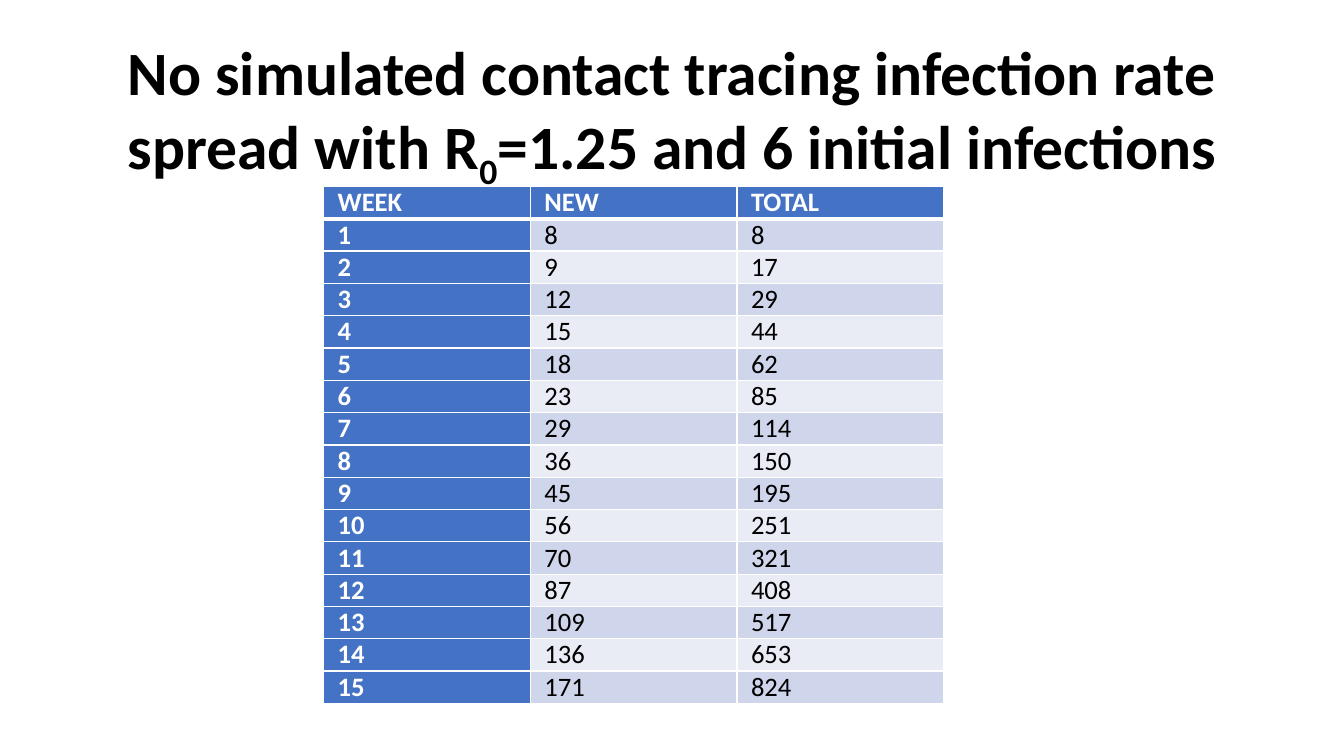
from itertools import accumulate

from lxml import etree
from pptx import Presentation
from pptx.dml.color import RGBColor
from pptx.enum.text import MSO_ANCHOR, MSO_AUTO_SIZE, PP_ALIGN
from pptx.oxml.ns import qn
from pptx.util import Inches, Pt

CENTER = PP_ALIGN.CENTER
JUSTIFY = PP_ALIGN.JUSTIFY
MIDDLE = MSO_ANCHOR.MIDDLE
BOTTOM = MSO_ANCHOR.BOTTOM
NO_AUTOFIT = MSO_AUTO_SIZE.NONE

FONT = "Calibri"
BLACK, WHITE, BLUE = "000000", "FFFFFF", "4472C4"
BANDS = ("CFD5EA", "E9EBF5")
TITLE_ONLY_LAYOUT = 5

HEADINGS = ("WEEK", "NEW", "TOTAL")
NEW_INFECTIONS = (8, 9, 12, 15, 18, 23, 29, 36, 45, 56, 70, 87, 109, 136, 171)
COLUMN_WIDTH, ROW_HEIGHT = 2.05, 0.32


def rgb(value):
    return RGBColor.from_string(value)


def add_run(paragraph, text, size, color, bold, baseline=None):
    run = paragraph.add_run()
    run.text = text
    run.font.name = FONT
    run.font.size = Pt(size)
    run.font.bold = bold
    run.font.color.rgb = rgb(color)
    if baseline is not None:
        run.font._element.set("baseline", str(baseline * 1000))


def fill_title(title):
    title.left, title.top = Inches(0.92), Inches(0.4)
    title.width, title.height = Inches(11.5), Inches(1.45)
    frame = title.text_frame
    frame.word_wrap = True
    frame.auto_size = NO_AUTOFIT
    frame.vertical_anchor = MIDDLE
    paragraph = frame.paragraphs[0]
    paragraph.alignment = CENTER
    paragraph.line_spacing = 0.9
    add_run(paragraph, "No simulated contact tracing infection rate spread with R", 44, BLACK, True)
    add_run(paragraph, "0", 44, BLACK, True, baseline=-25)
    add_run(paragraph, "=1.25 and 6 initial infections", 44, BLACK, True)


def set_borders(cell, widths):
    properties = cell._tc.get_or_add_tcPr()
    # Border lines come before the fill, in the order left, right, top, bottom
    for index, (side, width) in enumerate(zip("LRTB", widths)):
        line = etree.Element(qn(f"a:ln{side}"), w=str(Pt(width)))
        solid = etree.SubElement(line, qn("a:solidFill"))
        etree.SubElement(solid, qn("a:srgbClr"), val=WHITE)
        properties.insert(index, line)


def fill_cell(cell, text, row, column):
    is_heading = row == 0 or column == 0
    cell.fill.solid()
    cell.fill.fore_color.rgb = rgb(BLUE if is_heading else BANDS[(row - 1) % 2])
    cell.vertical_anchor = BOTTOM
    cell.margin_left = cell.margin_right = Inches(0.14)
    cell.margin_top = cell.margin_bottom = 0
    set_borders(cell, (1, 1, 3 if row == 1 else 1, 3 if row == 0 else 1))
    paragraph = cell.text_frame.paragraphs[0]
    paragraph.alignment = JUSTIFY
    add_run(paragraph, str(text), 19, WHITE if is_heading else BLACK, is_heading)


def add_infection_table(slide):
    weeks = range(1, len(NEW_INFECTIONS) + 1)
    rows = [HEADINGS, *zip(weeks, NEW_INFECTIONS, accumulate(NEW_INFECTIONS))]
    table = slide.shapes.add_table(
        len(rows), len(HEADINGS), Inches(3.21), Inches(1.85),
        Inches(COLUMN_WIDTH * len(HEADINGS)), Inches(ROW_HEIGHT * len(rows)),
    ).table
    for table_column in table.columns:
        table_column.width = Inches(COLUMN_WIDTH)
    for row, values in enumerate(rows):
        table.rows[row].height = Inches(ROW_HEIGHT)
        for column, value in enumerate(values):
            fill_cell(table.cell(row, column), value, row, column)


def main():
    presentation = Presentation()
    presentation.slide_width = Inches(13.33)
    presentation.slide_height = Inches(7.5)
    slide = presentation.slides.add_slide(presentation.slide_layouts[TITLE_ONLY_LAYOUT])

    # Title with subscript
    fill_title(slide.shapes.title)

    # Weekly new and running total of infections
    add_infection_table(slide)

    presentation.save("out.pptx")


if __name__ == "__main__":
    main()
